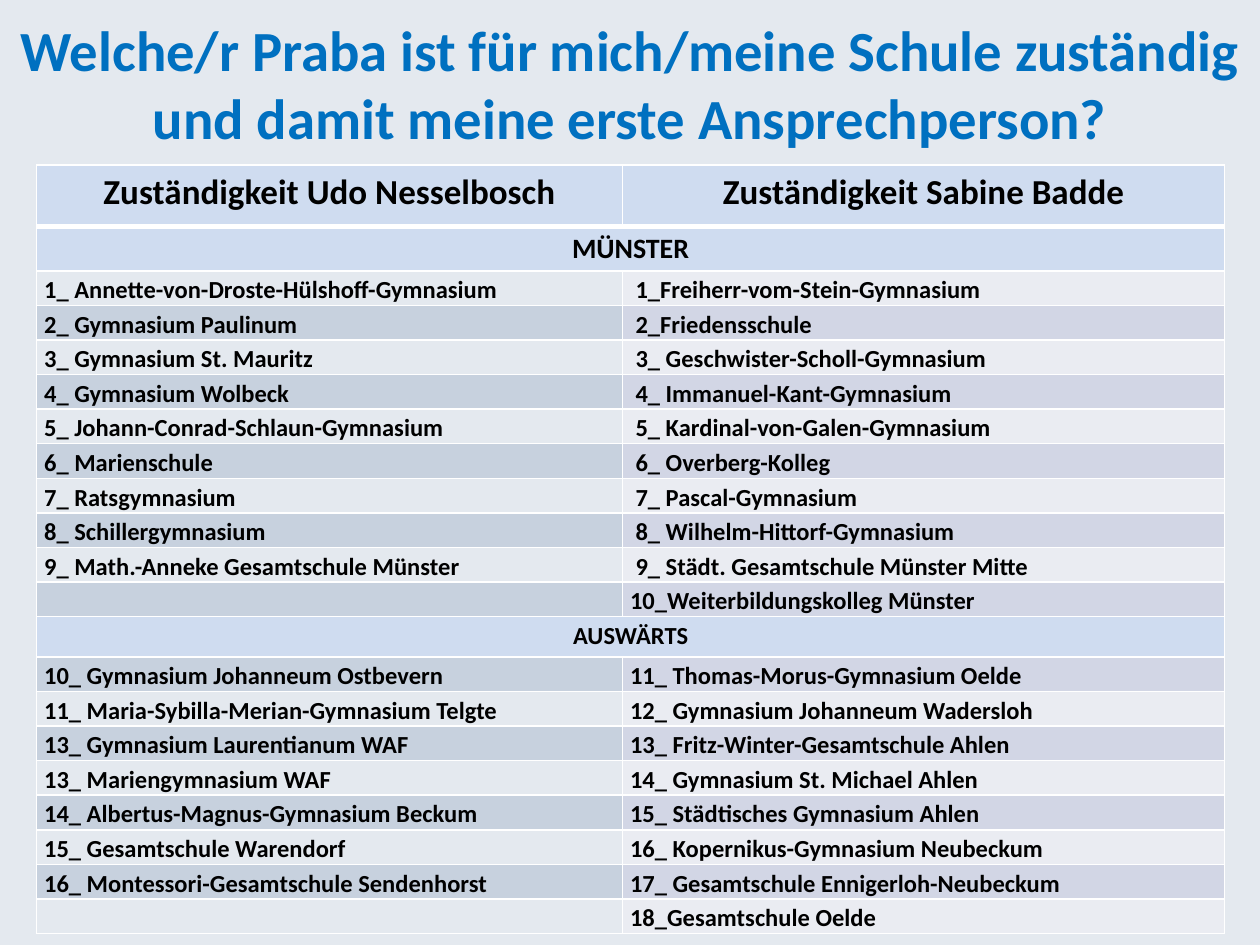
from lxml.etree import SubElement
from pptx import Presentation
from pptx.dml.color import RGBColor
from pptx.enum.text import MSO_ANCHOR, MSO_AUTO_SIZE, PP_ALIGN
from pptx.oxml.ns import qn
from pptx.util import Inches, Pt

HUES = {
    "back": "E4E9EF", "title": "0070C0", "text": "000000", "line": "FFFFFF",
    "head": "CFDCF0", "light": ("E4E9EF", "EAECF2"), "dark": ("C7D1DE", "D2D6E5"),
}
TITLE = "Welche/r Praba ist für mich/meine Schule zuständig und damit meine erste Ansprechperson?"
HEADS = ("Zuständigkeit Udo Nesselbosch", "Zuständigkeit Sabine Badde")
TOWN = [
    ("1_ Annette-von-Droste-Hülshoff-Gymnasium", " 1_Freiherr-vom-Stein-Gymnasium"),
    ("2_ Gymnasium Paulinum", " 2_Friedensschule"),
    ("3_ Gymnasium St. Mauritz", " 3_ Geschwister-Scholl-Gymnasium"),
    ("4_ Gymnasium Wolbeck", " 4_ Immanuel-Kant-Gymnasium"),
    ("5_ Johann-Conrad-Schlaun-Gymnasium", " 5_ Kardinal-von-Galen-Gymnasium"),
    ("6_ Marienschule", " 6_ Overberg-Kolleg"),
    ("7_ Ratsgymnasium", " 7_ Pascal-Gymnasium"),
    ("8_ Schillergymnasium", " 8_ Wilhelm-Hittorf-Gymnasium"),
    ("9_ Math.-Anneke Gesamtschule Münster", " 9_ Städt. Gesamtschule Münster Mitte"),
    ("", "10_Weiterbildungskolleg Münster"),
]
REGION = [
    ("10_ Gymnasium Johanneum Ostbevern", "11_ Thomas-Morus-Gymnasium Oelde"),
    ("11_ Maria-Sybilla-Merian-Gymnasium Telgte", "12_ Gymnasium Johanneum Wadersloh"),
    ("13_ Gymnasium Laurentianum WAF", "13_ Fritz-Winter-Gesamtschule Ahlen"),
    ("13_ Mariengymnasium WAF", "14_ Gymnasium St. Michael Ahlen"),
    ("14_ Albertus-Magnus-Gymnasium Beckum", "15_ Städtisches Gymnasium Ahlen"),
    ("15_ Gesamtschule Warendorf", "16_ Kopernikus-Gymnasium Neubeckum"),
    ("16_ Montessori-Gesamtschule Sendenhorst", "17_ Gesamtschule Ennigerloh-Neubeckum"),
    ("", "18_Gesamtschule Oelde"),
]
ROWS = [HEADS, ("MÜNSTER",), *TOWN, ("AUSWÄRTS",), *REGION]
SIZES = {0: 20, 1: 16}
TALL = {0: 0.49, 1: 0.35, len(TOWN) + 2: 0.32}
HIGH = 6.1
PLAIN = (HIGH - sum(TALL.values())) / (len(ROWS) - len(TALL))
WIDE = (4.65, 4.78)
CELL = {
    "margin_left": Inches(0.06), "margin_right": Inches(0.06),
    "margin_top": 0, "margin_bottom": 0,
}


def apply(part, form):
    """Set each format value on the given part."""
    for name, value in form.items():
        setattr(part, name, value)


def paint(fill, hue):
    """Give a fill one solid colour."""
    fill.solid()
    fill.fore_color.rgb = RGBColor.from_string(hue)


def write(par, text, size, hue, form):
    """Put bold text into a paragraph, or keep its size when empty."""
    apply(par, form)
    if not text:
        SubElement(par._p, qn("a:endParaRPr"), sz=str(size * 100))
        return
    run = par.add_run()
    run.text = text
    apply(run.font, {"name": "Calibri", "size": Pt(size), "bold": True})
    run.font.color.rgb = RGBColor.from_string(hue)


def edge(cell, row):
    """Draw the white borders of a cell, thick below the header."""
    thick = {0: "lnB", 1: "lnT"}.get(row)
    props = cell._tc.get_or_add_tcPr()
    for side in ("lnL", "lnR", "lnT", "lnB"):
        line = SubElement(props, qn(f"a:{side}"), w=str(Pt(3 if side == thick else 1)))
        solid = SubElement(line, qn("a:solidFill"))
        SubElement(solid, qn("a:srgbClr"), val=HUES["line"])


def add_title(slide):
    """Place and format the slide title."""
    title = slide.shapes.title
    apply(title, {"left": 0, "top": 0, "width": Inches(10), "height": Inches(1.31)})
    frame = title.text_frame
    apply(frame, {
        "word_wrap": True, "auto_size": MSO_AUTO_SIZE.NONE,
        "vertical_anchor": MSO_ANCHOR.MIDDLE,
    })
    write(frame.paragraphs[0], TITLE, 32.4, HUES["title"], {"alignment": PP_ALIGN.CENTER})


def add_grid(slide):
    """Build the table of schools."""
    grid = slide.shapes.add_table(
        len(ROWS), len(WIDE), Inches(0.29), Inches(1.31), Inches(sum(WIDE)), Inches(HIGH)
    ).table
    for col, width in zip(grid.columns, WIDE):
        col.width = Inches(width)
    for row, texts in enumerate(ROWS):
        grid.rows[row].height = Inches(TALL.get(row, PLAIN))
        if len(texts) == 1:
            grid.cell(row, 0).merge(grid.cell(row, 1))
        for col in range(len(WIDE)):
            cell = grid.cell(row, col)
            apply(cell, CELL)
            edge(cell, row)
            band = HUES["dark" if row % 2 else "light"][col]
            paint(cell.fill, HUES["head"] if row in TALL else band)
            if col < len(texts):
                form = {
                    "alignment": PP_ALIGN.CENTER if row in TALL else PP_ALIGN.JUSTIFY,
                    "line_spacing": 1.15, "space_after": Pt(10),
                }
                par = cell.text_frame.paragraphs[0]
                write(par, texts[col], SIZES.get(row, 14), HUES["text"], form)


def main():
    """Build and save the slide."""
    deck = Presentation()
    apply(deck, {"slide_width": Inches(10), "slide_height": Inches(7.5)})
    slide = deck.slides.add_slide(deck.slide_layouts[5])
    paint(slide.background.fill, HUES["back"])
    add_title(slide)
    add_grid(slide)
    deck.save("out.pptx")


if __name__ == "__main__":
    main()
